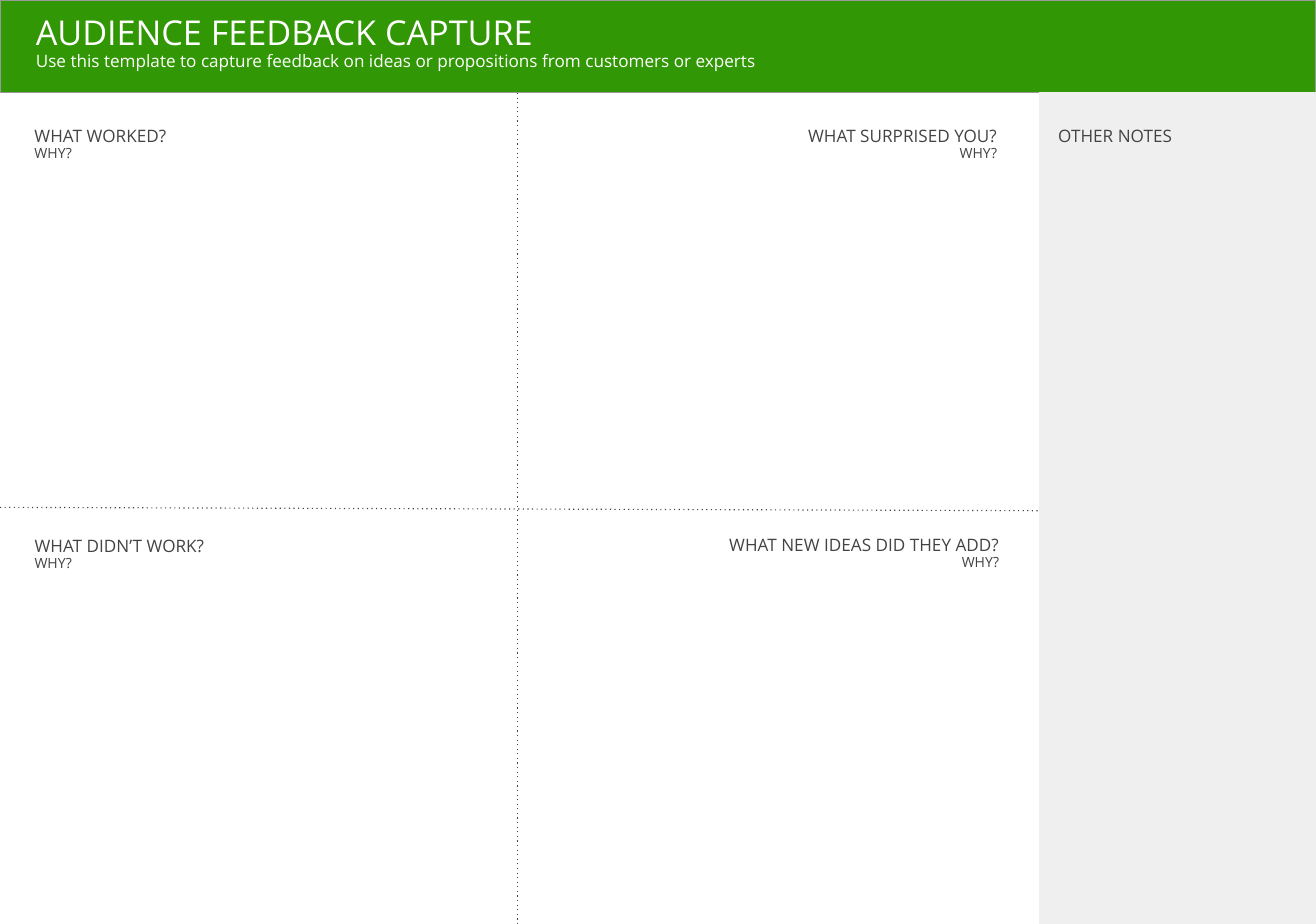
"""Build the audience feedback capture sheet."""
from dataclasses import dataclass

from lxml import etree
from pptx import Presentation
from pptx.dml.color import RGBColor
from pptx.enum.shapes import MSO_CONNECTOR, MSO_SHAPE
from pptx.enum.text import MSO_ANCHOR, MSO_AUTO_SIZE, PP_ALIGN
from pptx.oxml.ns import qn
from pptx.util import Inches, Pt

RECTANGLE = MSO_SHAPE.RECTANGLE
STRAIGHT = MSO_CONNECTOR.STRAIGHT
TOP = MSO_ANCHOR.TOP
GROW = MSO_AUTO_SIZE.SHAPE_TO_FIT_TEXT
LEFT, RIGHT = PP_ALIGN.LEFT, PP_ALIGN.RIGHT
TITLE_ONLY = 5

WIDTH, HEIGHT = 11.75, 8.25
BANNER_HEIGHT = 0.83
NOTES_LEFT = 9.28
MARGIN_LEFT = 0.21


@dataclass(frozen=True)
class Theme:
    """Colours, font and type sizes of the sheet."""
    green: str = "319704"
    grey: str = "999999"
    panel: str = "EFEFEF"
    ink: str = "434343"
    white: str = "FFFFFF"
    font: str = "Open Sans"
    title: int = 22
    heading: int = 11
    prompt: int = 9
    line: float = 0.75
    spacing: float = 0.9


THEME = Theme()

QUADRANTS = [
    ("WHAT WORKED?", (MARGIN_LEFT, 1.04, 2.07, 0.54), LEFT),
    ("WHAT SURPRISED YOU?", (6.11, 1.04, 2.89, 0.54), RIGHT),
    ("WHAT DIDN’T WORK?", (MARGIN_LEFT, 4.7, 2.89, 0.54), LEFT),
    ("WHAT NEW IDEAS DID THEY ADD?", (5.18, 4.69, 3.84, 0.72), RIGHT),
]


def set_all(target, values):
    """Set each named attribute on the target."""
    for name, value in values.items():
        setattr(target, name, value)


def add_panel(page, place, fill, outline):
    """Add a filled rectangle with a thin outline."""
    panel = page.shapes.add_shape(RECTANGLE, *map(Inches, place))
    panel.shadow.inherit = False
    panel.fill.solid()
    panel.fill.fore_color.rgb = RGBColor.from_string(fill)
    panel.line.color.rgb = RGBColor.from_string(outline)
    panel.line.width = Pt(THEME.line)
    return panel


def add_divider(page, start, end):
    """Add a dotted line between two points."""
    divider = page.shapes.add_connector(STRAIGHT, *map(Inches, start + end))
    divider.line.color.rgb = RGBColor.from_string(THEME.ink)
    divider.line.width = Pt(THEME.line)
    properties = divider._element.spPr
    outline = properties.find(qn("a:ln"))
    etree.SubElement(outline, qn("a:prstDash")).set("val", "dot")
    etree.SubElement(properties, qn("a:effectLst"))


def write_lines(box, lines, color, inset=0.1, align=LEFT):
    """Write (text, size) lines into a box, one paragraph each."""
    frame = box.text_frame
    sides = ("left", "top", "right", "bottom")
    set_all(frame, {f"margin_{side}": Inches(inset) for side in sides})
    set_all(frame, {"word_wrap": True, "auto_size": GROW,
                    "vertical_anchor": TOP})
    for index, (text, size) in enumerate(lines):
        para = frame.add_paragraph() if index else frame.paragraphs[0]
        set_all(para, {"alignment": align, "line_spacing": THEME.spacing})
        span = para.add_run()
        span.text = text
        set_all(span.font, {"name": THEME.font, "size": Pt(size)})
        span.font.color.rgb = RGBColor.from_string(color)


def add_heading(page, place, lines, align=LEFT):
    """Add a text box with a heading and any prompt under it."""
    box = page.shapes.add_textbox(*map(Inches, place))
    write_lines(box, lines, THEME.ink, align=align)


def add_banner(page):
    """Add the green banner and lay the title over it."""
    banner = add_panel(page, (0, 0, WIDTH, BANNER_HEIGHT),
                       THEME.green, THEME.grey)
    title = page.shapes.title
    set_all(title, {"left": Inches(MARGIN_LEFT), "top": Inches(0.03),
                    "width": Inches(NOTES_LEFT), "height": Inches(0.78)})
    write_lines(title, [
        ("AUDIENCE FEEDBACK CAPTURE", THEME.title),
        ("Use this template to capture feedback on ideas or propositions "
         "from customers or experts", THEME.heading),
    ], THEME.white, inset=0.11)
    banner._element.addnext(title._element)


def main():
    """Build and save the deck."""
    deck = Presentation()
    set_all(deck, {"slide_width": Inches(WIDTH),
                   "slide_height": Inches(HEIGHT)})
    page = deck.slides.add_slide(deck.slide_layouts[TITLE_ONLY])
    add_banner(page)
    add_divider(page, (4.62, BANNER_HEIGHT), (4.62, HEIGHT))
    add_divider(page, (0, 4.53), (NOTES_LEFT, 4.56))
    for question, place, align in QUADRANTS:
        add_heading(page, place, [(question, THEME.heading),
                                  ("WHY?", THEME.prompt)], align)
    add_panel(page, (NOTES_LEFT, BANNER_HEIGHT, WIDTH - NOTES_LEFT,
                     HEIGHT - BANNER_HEIGHT), THEME.panel, THEME.panel)
    add_heading(page, (9.35, 1.06, 1.94, 0.39),
                [("OTHER NOTES", THEME.heading)])
    deck.save("out.pptx")


if __name__ == "__main__":
    main()
